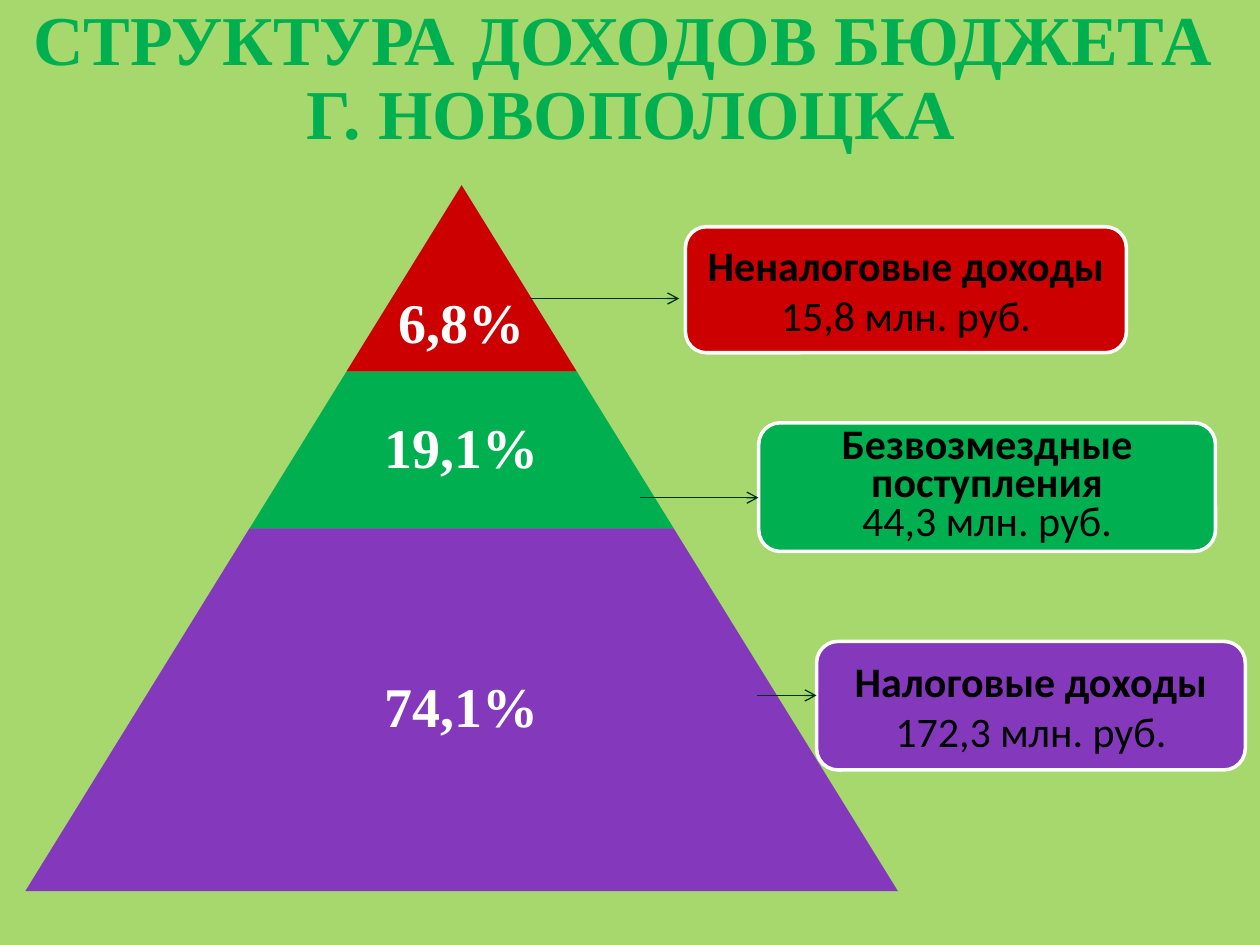
from lxml import etree
from pptx import Presentation
from pptx.dml.color import RGBColor
from pptx.enum import shapes, text
from pptx.oxml import ns
from pptx.util import Pt

HUES = {
    "back": "A6D86E", "red": "CC0000", "green": "00B050", "violet": "8439BD",
    "white": "FFFFFF", "black": "000000", "arrow": "003217",
}
SERIF, SANS = "Times New Roman", "Calibri"

# Pyramid: apex, level edges, and half-width gained per point of height
APEX, SLOPE = 263.8, 0.618
EDGES = [105.8, 212.4, 302, 509.2]
LEVELS = [("6,8%", "red"), ("19,1%", "green"), ("74,1%", "violet")]

# Heading, amount, hue, box (left, top, width, height), line spacing
CARDS = [
    ("Неналоговые доходы", "15,8 млн. руб.", "red", (391.7, 129.6, 252, 72), None),
    ("Налоговые доходы", "172,3 млн. руб.", "violet", (466.6, 366.5, 245, 73.5), None),
    ("Безвозмездные поступления", "44,3 млн. руб.", "green",
     (433.6, 241.6, 261, 73.5), Pt(22)),
]
ARROWS = [(303.1, 388.1, 170.6), (365.8, 433.4, 284.4), (432.7, 466.6, 397.4)]


def color(name):
    return RGBColor.from_string(HUES[name])


class Deck:
    def __init__(self):
        self.file = Presentation()
        self.file.slide_width, self.file.slide_height = Pt(720), Pt(540)
        self.slide = self.file.slides.add_slide(self.file.slide_layouts[5])
        fill = self.slide.background.fill
        fill.solid()
        fill.fore_color.rgb = color("back")

    def style(self, para, font, size, hue, bold=True, gap=None):
        para.alignment = text.PP_ALIGN.CENTER
        para.line_spacing = gap
        para.font.name, para.font.size = font, Pt(size)
        para.font.bold = bold
        para.font.color.rgb = color(hue)

    def title(self, words, box):
        head = self.slide.shapes.title
        head.left, head.top, head.width, head.height = map(Pt, box)
        frame = head.text_frame
        frame.text = words
        frame.auto_size = text.MSO_AUTO_SIZE.NONE
        frame.vertical_anchor = text.MSO_ANCHOR.MIDDLE
        self.style(frame.paragraphs[0], SERIF, 40, "green", gap=Pt(42))

    def shape(self, kind, box, hue):
        item = self.slide.shapes.add_shape(kind, *map(Pt, box))
        item.shadow.inherit = False
        item.fill.solid()
        item.fill.fore_color.rgb = color(hue)
        item.line.fill.background()
        return item

    def level(self, top, base, hue):
        half = SLOPE * (base - EDGES[0])
        box = (APEX - half, top, 2 * half, base - top)
        part = self.shape(shapes.MSO_SHAPE.TRAPEZOID, box, hue)
        part.adjustments[0] = SLOPE

    def label(self, words, top, base, low):
        """Centre the words on the apex line, near the base if low."""
        box = (APEX - 80, top, 160, base - top)
        frame = self.slide.shapes.add_textbox(*map(Pt, box)).text_frame
        frame.word_wrap = True
        anchor = text.MSO_ANCHOR
        frame.vertical_anchor = anchor.BOTTOM if low else anchor.MIDDLE
        frame.margin_top, frame.margin_bottom = Pt(3), Pt(9 if low else 3)
        frame.text = words
        self.style(frame.paragraphs[0], SERIF, 32, "white", gap=0.9)

    def card(self, name, sum_, hue, box, gap):
        card = self.shape(shapes.MSO_SHAPE.ROUNDED_RECTANGLE, box, hue)
        card.line.color.rgb = color("white")
        card.line.width = Pt(2)
        frame = card.text_frame
        frame.word_wrap = True
        frame.vertical_anchor = text.MSO_ANCHOR.MIDDLE
        frame.text = f"{name}\n{sum_}"
        for para, bold in zip(frame.paragraphs, (True, False)):
            self.style(para, SANS, 24, "black", bold, gap)

    def arrow(self, start, end, y):
        line = self.slide.shapes.add_connector(
            shapes.MSO_CONNECTOR.STRAIGHT, Pt(start), Pt(y), Pt(end), Pt(y))
        line.line.color.rgb = color("arrow")
        line.line.width = Pt(0.75)
        props = line._element.spPr
        etree.SubElement(props.find(ns.qn("a:ln")), ns.qn("a:tailEnd"), type="arrow")
        etree.SubElement(props, ns.qn("a:effectLst"))


def main():
    deck = Deck()
    deck.title("СТРУКТУРА ДОХОДОВ БЮДЖЕТА \vГ. НОВОПОЛОЦКА", (0.7, 3.6, 720, 84.2))
    for i, (words, hue) in enumerate(LEVELS):
        top, base = EDGES[i:i + 2]
        deck.level(top, base, hue)
        deck.label(words, top, base, low=i == 0)
    for card in CARDS:
        deck.card(*card)
    for arrow in ARROWS:
        deck.arrow(*arrow)
    deck.file.save("out.pptx")


if __name__ == "__main__":
    main()
